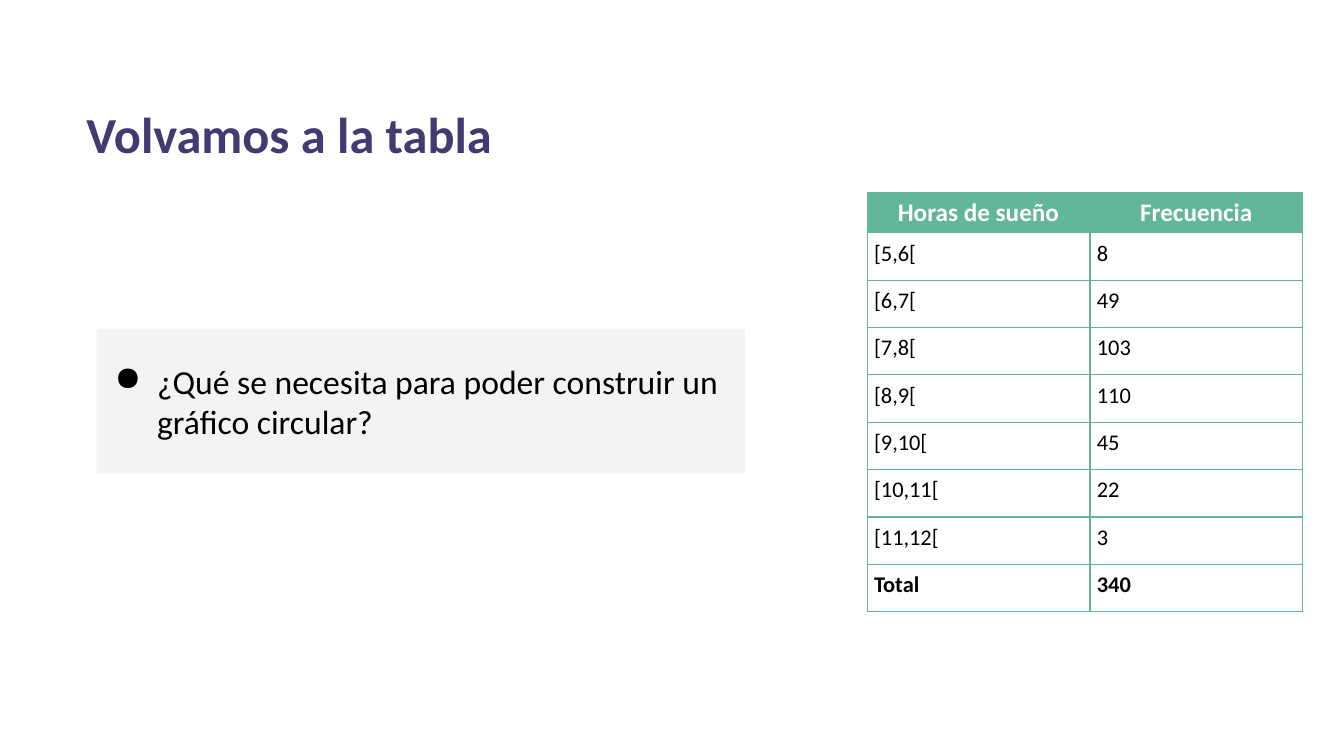
from pptx import Presentation
from pptx.dml.color import RGBColor
from pptx.enum.shapes import MSO_SHAPE as SHAPE
from pptx.enum.text import MSO_ANCHOR as ANCHOR, PP_ALIGN as ALIGN
from pptx.oxml.ns import qn
from pptx.util import Emu, Pt
from lxml.etree import SubElement

EMU_PER_PX = 9144  # 100 px to the inch
COLORS = {
    "title": "423B71",
    "accent": "63B799",
    "panel": "F3F3F3",
    "text": "000000",
    "white": "FFFFFF",
}
SLEEP_ROWS = [
    ("Horas de sueño", "Frecuencia"),
    ("[5,6[", "8"),
    ("[6,7[", "49"),
    ("[7,8[", "103"),
    ("[8,9[", "110"),
    ("[9,10[", "45"),
    ("[10,11[", "22"),
    ("[11,12[", "3"),
    ("Total", "340"),
]


def px(n):
    return Emu(n * EMU_PER_PX)


def rgb(name):
    return RGBColor.from_string(COLORS[name])


class Deck:
    font = "Calibri"

    def __init__(self, width, height):
        self.prs = Presentation()
        self.prs.slide_width, self.prs.slide_height = px(width), px(height)
        self.slide = self.prs.slides.add_slide(self.prs.slide_layouts[6])

    def style(self, p, size, color, bold=False):
        for r in p.runs:
            r.font.name = self.font
            r.font.size = Pt(size)
            r.font.bold = bold
            r.font.color.rgb = rgb(color)

    def margins(self, box, side, top):
        box.margin_left = box.margin_right = px(side)
        box.margin_top = box.margin_bottom = px(top)

    def title(self, x, y, w, h, text):
        tf = self.slide.shapes.add_textbox(px(x), px(y), px(w), px(h)).text_frame
        tf.word_wrap = True
        self.margins(tf, 10, 5)
        tf.text = text
        self.style(tf.paragraphs[0], 36, "title", True)

    def bullet_panel(self, x, y, w, h, text):
        sp = self.slide.shapes.add_shape(SHAPE.RECTANGLE, px(x), px(y), px(w), px(h))
        sp.shadow.inherit = False
        sp.fill.solid()
        sp.fill.fore_color.rgb = rgb("panel")
        sp.line.fill.background()
        tf = sp.text_frame
        tf.word_wrap = True
        tf.vertical_anchor = ANCHOR.MIDDLE
        self.margins(tf, 10, 10)
        tf.text = text
        p = tf.paragraphs[0]
        p.alignment = ALIGN.LEFT
        pPr = p._p.get_or_add_pPr()
        pPr.set("marL", str(px(50)))
        pPr.set("indent", str(px(-42)))
        bullet_color = SubElement(pPr, qn("a:buClr"))
        SubElement(bullet_color, qn("a:srgbClr"), val=COLORS["text"])
        SubElement(pPr, qn("a:buChar"), char="●")
        self.style(p, 24, "text")

    def borders(self, cell):
        tcPr = cell._tc.get_or_add_tcPr()
        for side in "LRTB":
            ln = SubElement(tcPr, qn(f"a:ln{side}"), w=str(Pt(1)))
            fill = SubElement(ln, qn("a:solidFill"))
            SubElement(fill, qn("a:srgbClr"), val=COLORS["accent"])

    def cell(self, cell, text, header, bold):
        self.borders(cell)
        cell.text = text
        p = cell.text_frame.paragraphs[0]
        if header:
            cell.fill.solid()
            cell.fill.fore_color.rgb = rgb("accent")
            cell.vertical_anchor = ANCHOR.MIDDLE
            self.margins(cell, 10, 5)
            p.alignment = ALIGN.CENTER
            self.style(p, 18, "white", True)
        else:
            cell.fill.background()
            self.margins(cell, 7, 7)
            self.style(p, 16, "text", bold)

    def table(self, x, y, widths, header_h, row_h, rows):
        heights = [header_h] + [row_h] * (len(rows) - 1)
        table = self.slide.shapes.add_table(
            len(rows), len(widths), px(x), px(y), px(sum(widths)), px(sum(heights))
        ).table
        table.horz_banding = False
        for column, width in zip(table.columns, widths):
            column.width = px(width)
        for i, (values, height) in enumerate(zip(rows, heights)):
            table.rows[i].height = px(height)
            for j, value in enumerate(values):
                self.cell(table.cell(i, j), value, i == 0, i == len(rows) - 1)


def main():
    deck = Deck(1333, 750)
    # Heading
    deck.title(76, 97, 893, 71, "Volvamos a la tabla")
    # Question
    deck.bullet_panel(96, 326, 643, 144,
                      "¿Qué se necesita para poder construir un gráfico circular?")
    # Frequency table
    deck.table(860, 191, [221, 211], 39, 47, SLEEP_ROWS)
    deck.prs.save("out.pptx")


if __name__ == "__main__":
    main()
